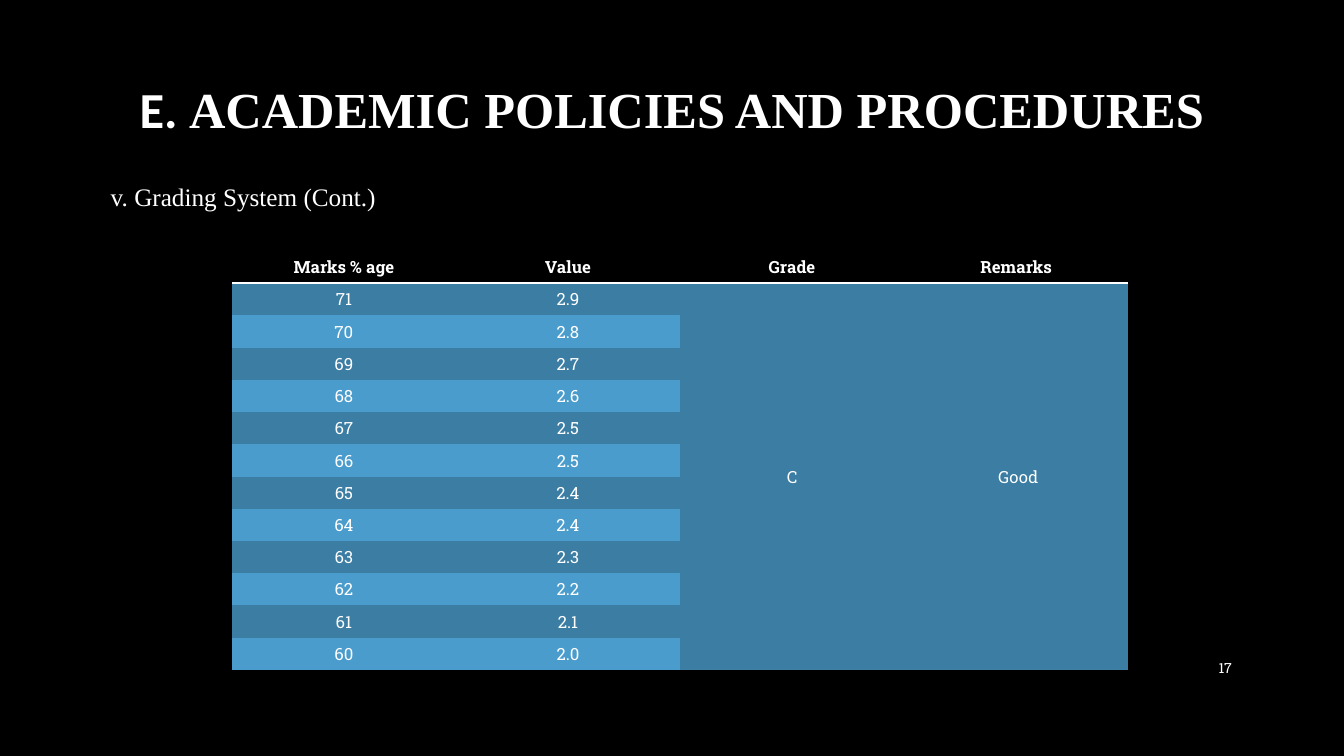
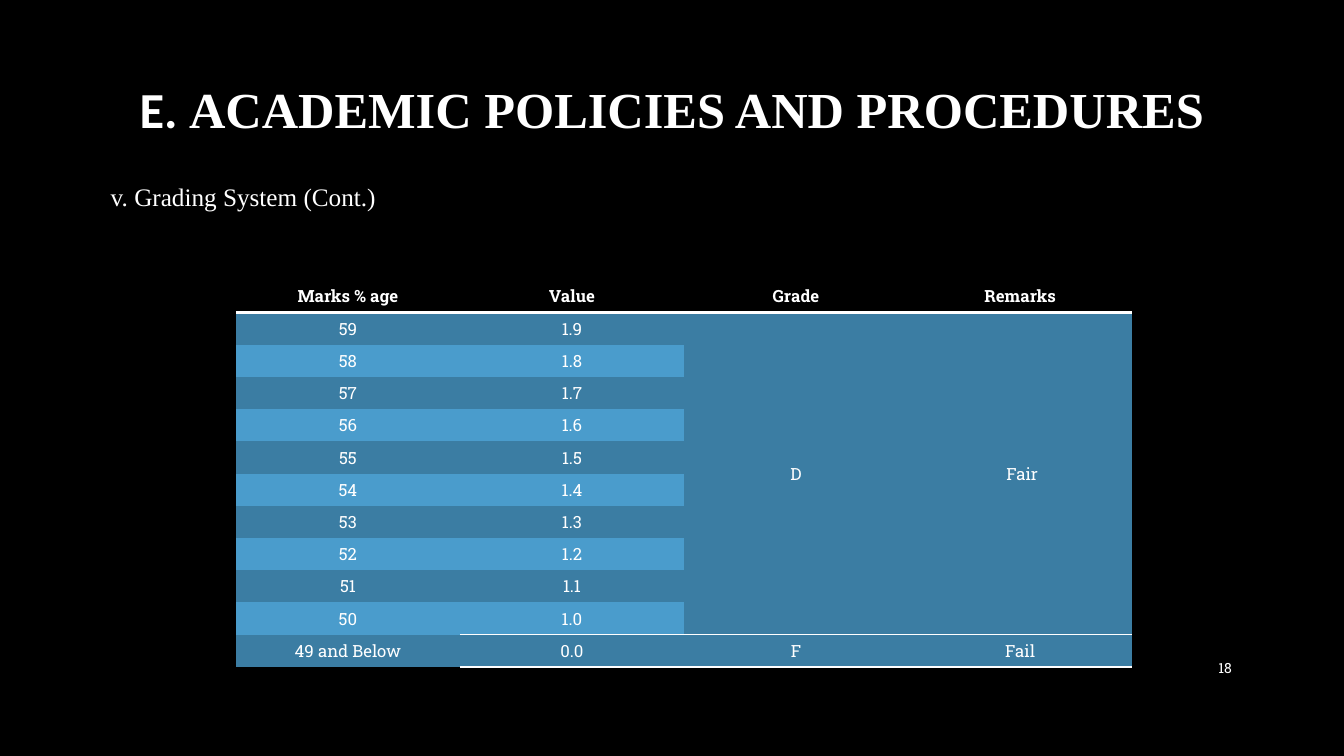
from lxml.etree import SubElement
from pptx import Presentation
from pptx.dml.color import RGBColor
from pptx.enum.text import MSO_ANCHOR, PP_ALIGN
from pptx.oxml.ns import qn
from pptx.util import Inches, Pt

WIDTH, HEIGHT = 13.33, 7.5
GRID_COLUMNS, GRID_ROWS = 40, 75
COLORS = {"page": "000000", "text": "FFFFFF", "dark": "3B7DA3", "light": "4A9CCC"}
NO_STYLE_NO_GRID = "{2D5ABB26-0587-4C30-8999-92F81FD0307C}"

TITLE_FONT = {"name": "Times New Roman", "size": Pt(36), "bold": True}
PREFIX_FONT = {**TITLE_FONT, "name": "Calibri"}
TOPIC_FONT = {"name": "Times New Roman", "size": Pt(18)}
CELL_FONT = {"name": "Roboto Slab", "size": Pt(12), "bold": False}
HEADER_FONT = {**CELL_FONT, "bold": True}
NUMBER_FONT = {"name": "Roboto Slab", "size": Pt(10)}

HEADINGS = ["Marks % age", "Value", "Grade", "Remarks"]
TABLE_COLUMN, TABLE_ROW = 6.67, 3.2
GRADE_PAGES = [
    {
        "number": "17", "corner": (6.9, 24.9), "top_mark": 71,
        "values": ["2.9", "2.8", "2.7", "2.6", "2.5", "2.5",
                   "2.4", "2.4", "2.3", "2.2", "2.1", "2.0"],
        "verdict": ["C", " Good"], "closing": None,
    },
    {
        "number": "18", "corner": (7.02, 27.8), "top_mark": 59,
        "values": ["1.9", "1.8", "1.7", "1.6", "1.5",
                   "1.4", "1.3", "1.2", "1.1", "1.0"],
        "verdict": ["D", " Fair"], "closing": ["49 and Below", "0.0", "F", "Fail"],
    },
]


def columns(count):
    return Inches(WIDTH * count / GRID_COLUMNS)


def rows(count):
    return Inches(HEIGHT * count / GRID_ROWS)


def set_values(target, values):
    for name, value in values.items():
        setattr(target, name, value)


def add_span(para, text, font):
    span = para.add_run()
    span.text = text
    set_values(span.font, font)
    span.font.color.rgb = RGBColor.from_string(COLORS["text"])


def add_text(page, place, spans, para_format, anchor=MSO_ANCHOR.TOP):
    """Add a one-paragraph box; place is left, top, width, height on the grid."""
    left, top, width, height = place
    box = page.shapes.add_textbox(columns(left), rows(top), columns(width), rows(height))
    set_values(box.text_frame, {"word_wrap": True, "vertical_anchor": anchor})
    para = box.text_frame.paragraphs[0]
    set_values(para, para_format)
    for text, font in spans:
        add_span(para, text, font)


def add_border(cell, side, points):
    """Rule one side of a cell (T or B); borders must come before the fill."""
    line = SubElement(cell._tc.get_or_add_tcPr(), qn(f"a:ln{side}"), w=str(Pt(points)))
    fill = SubElement(line, qn("a:solidFill"))
    SubElement(fill, qn("a:srgbClr"), val=COLORS["text"])


def fill_cell(cell, text, color, font=CELL_FONT, borders=None):
    for side, points in (borders or {}).items():
        add_border(cell, side, points)
    cell.fill.solid()
    cell.fill.fore_color.rgb = RGBColor.from_string(COLORS[color])
    cell.vertical_anchor = MSO_ANCHOR.MIDDLE
    para = cell.text_frame.paragraphs[0]
    para.alignment = PP_ALIGN.CENTER
    add_span(para, text, font)


def add_plain_table(page, corner, row_count):
    left, top = corner
    count = len(HEADINGS)
    frame = page.shapes.add_table(row_count, count, columns(left), rows(top),
                                  columns(TABLE_COLUMN * count), rows(TABLE_ROW * row_count))
    table = frame.table
    set_values(table, {"first_row": False, "horz_banding": False})
    table._tbl.tblPr.find(qn("a:tableStyleId")).text = NO_STYLE_NO_GRID
    for column in table.columns:
        column.width = columns(TABLE_COLUMN)
    for row in table.rows:
        row.height = rows(TABLE_ROW)
    return table


def add_grade_table(page, corner, top_mark, values, verdict, closing):
    """Add banded marks and values beside one merged grade and remark."""
    last = len(values)
    table = add_plain_table(page, corner, last + (2 if closing else 1))
    for column, heading in enumerate(HEADINGS):
        fill_cell(table.cell(0, column), heading, "page", HEADER_FONT, {"B": 2})
    for row, value in enumerate(values, start=1):
        color = "dark" if row % 2 else "light"
        fill_cell(table.cell(row, 0), str(top_mark + 1 - row), color)
        fill_cell(table.cell(row, 1), value, color)
    for column, text in enumerate(verdict, start=2):
        merged = table.cell(1, column)
        merged.merge(table.cell(last, column))
        fill_cell(merged, text, "dark", borders={"B": 1} if closing else None)
    for column, text in enumerate(closing or []):
        fill_cell(table.cell(last + 1, column), text, "dark",
                  borders={"T": 1, "B": 1} if column else None)


def add_page(deck):
    """Add a page with the shared background, title and topic."""
    page = deck.slides.add_slide(deck.slide_layouts[6])
    page.background.fill.solid()
    page.background.fill.fore_color.rgb = RGBColor.from_string(COLORS["page"])
    add_text(page, (3, 6.7, 34, 8.8),
             [("E. ", PREFIX_FONT), ("ACADEMIC POLICIES AND PROCEDURES", TITLE_FONT)],
             {"alignment": PP_ALIGN.CENTER, "line_spacing": 0.9}, MSO_ANCHOR.MIDDLE)
    add_text(page, (3, 17.3, 34, 52), [("v. Grading System (Cont.)", TOPIC_FONT)],
             {"line_spacing": 1.07, "space_after": Pt(8)})
    return page


def add_page_number(page, number):
    add_text(page, (34.5, 64.3, 2.46, 4), [(number, NUMBER_FONT)],
             {"alignment": PP_ALIGN.RIGHT}, MSO_ANCHOR.MIDDLE)


def main():
    deck = Presentation()
    set_values(deck, {"slide_width": Inches(WIDTH), "slide_height": Inches(HEIGHT)})
    for content in GRADE_PAGES:
        page = add_page(deck)
        add_grade_table(page, content["corner"], content["top_mark"], content["values"],
                        content["verdict"], content["closing"])
        add_page_number(page, content["number"])
    deck.save("out.pptx")


if __name__ == "__main__":
    main()
